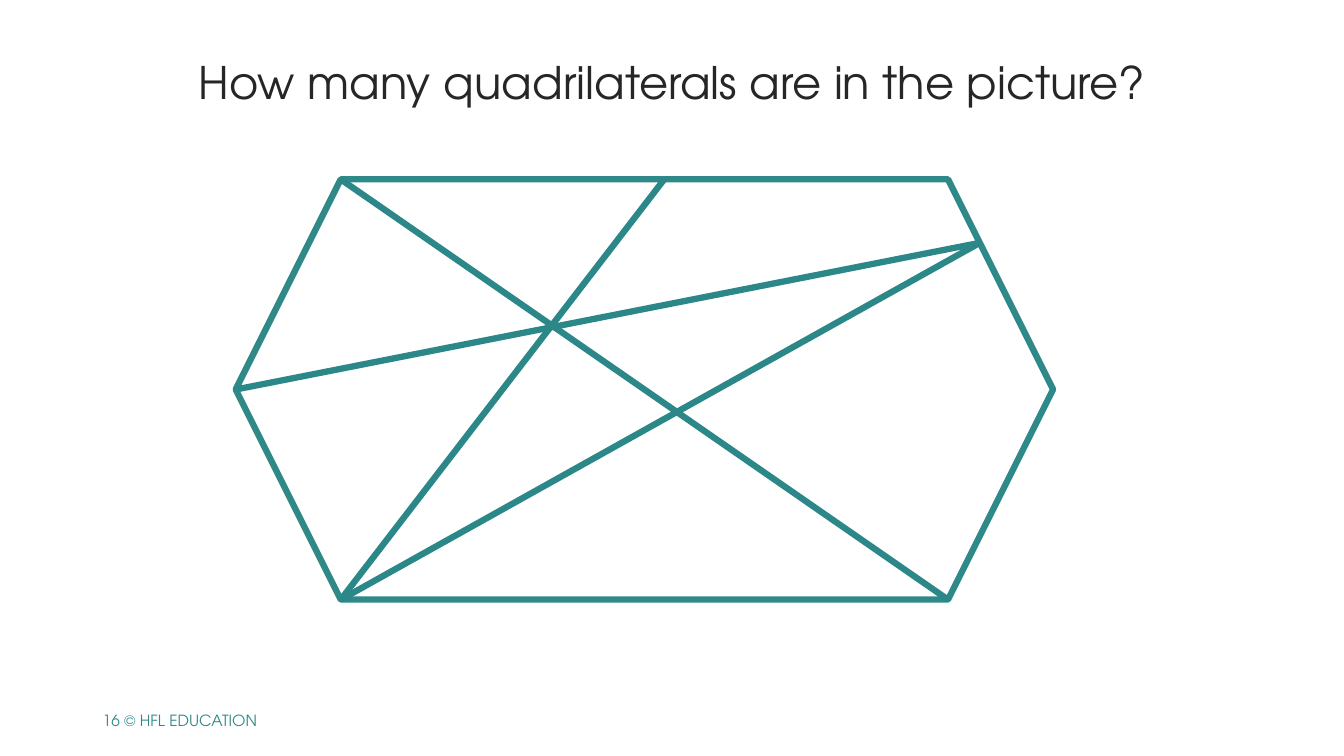
from dataclasses import dataclass

from lxml.etree import SubElement
from pptx import Presentation
from pptx.dml.color import RGBColor
from pptx.enum.shapes import MSO_CONNECTOR, MSO_SHAPE
from pptx.enum.text import MSO_ANCHOR, MSO_AUTO_SIZE, PP_ALIGN
from pptx.oxml.ns import qn
from pptx.util import Cm, Pt

# Content
TITLE = "How many quadrilaterals are in the picture?"
FOOTER = "16 © HFL EDUCATION"
CHORDS = [
    ("top left", "low right"),
    ("low left", "top mid"),
    ("left", "right edge"),
    ("low left", "right edge"),
]


@dataclass(frozen=True)
class Theme:
    font: str = "TeX Gyre Adventor"
    ink: RGBColor = RGBColor(0x26, 0x26, 0x26)
    teal: RGBColor = RGBColor(0x2F, 0x89, 0x89)
    chord: RGBColor = RGBColor(0x2C, 0x88, 0x88)
    title: Pt = Pt(32)
    small: Pt = Pt(11)
    line: Pt = Pt(4.5)


THEME = Theme()

# Hexagon frame in cm; its slanted sides take a quarter of the height
LEFT, TOP, WIDE, HIGH = 5.94, 4.52, 20.6, 10.59
SLANT = HIGH / 4
RIGHT, LOW = LEFT + WIDE, TOP + HIGH
DROP = 1.6  # depth of the point on the upper right side
POINTS = {
    "top left": (LEFT + SLANT, TOP),
    "top mid": (16.74, TOP),
    "right edge": (RIGHT - SLANT + DROP * SLANT / (HIGH / 2), TOP + DROP),
    "low right": (RIGHT - SLANT, LOW),
    "low left": (LEFT + SLANT, LOW),
    "left": (LEFT, TOP + HIGH / 2),
}


def write(frame, text, size, color, anchor):
    frame.word_wrap = True
    frame.auto_size = MSO_AUTO_SIZE.NONE
    frame.vertical_anchor = anchor
    frame.text = text
    para = frame.paragraphs[0]
    para.font.name = THEME.font
    para.font.size = size
    para.font.color.rgb = color
    return para


def stroke(shape, color):
    shape.line.color.rgb = color
    shape.line.width = THEME.line


def main():
    deck = Presentation()
    deck.slide_width, deck.slide_height = Cm(33.87), Cm(19.05)
    slide = deck.slides.add_slide(deck.slide_layouts[5])

    # Title
    title = slide.shapes.title
    title.left, title.top = Cm(4.45), Cm(1.24)
    title.width, title.height = Cm(25), Cm(1.63)
    para = write(title.text_frame, TITLE, THEME.title, THEME.ink, MSO_ANCHOR.TOP)
    para.alignment = PP_ALIGN.CENTER
    para.space_after = Pt(12)

    # Footer
    foot = slide.shapes.add_textbox(Cm(2.34), Cm(17.65), Cm(6.99), Cm(1.02))
    write(foot.text_frame, FOOTER, THEME.small, THEME.teal, MSO_ANCHOR.MIDDLE)

    # Hexagon and its chords, grouped
    puzzle = slide.shapes.add_group_shape().shapes
    hexagon = puzzle.add_shape(
        MSO_SHAPE.HEXAGON, Cm(LEFT), Cm(TOP), Cm(WIDE), Cm(HIGH))
    hexagon.shadow.inherit = False
    hexagon.fill.background()
    stroke(hexagon, THEME.teal)
    for start, end in CHORDS:
        ends = [Cm(n) for n in POINTS[start] + POINTS[end]]
        chord = puzzle.add_connector(MSO_CONNECTOR.STRAIGHT, *ends)
        stroke(chord, THEME.chord)
        SubElement(chord._element.spPr, qn("a:effectLst"))

    deck.save("out.pptx")


if __name__ == "__main__":
    main()
